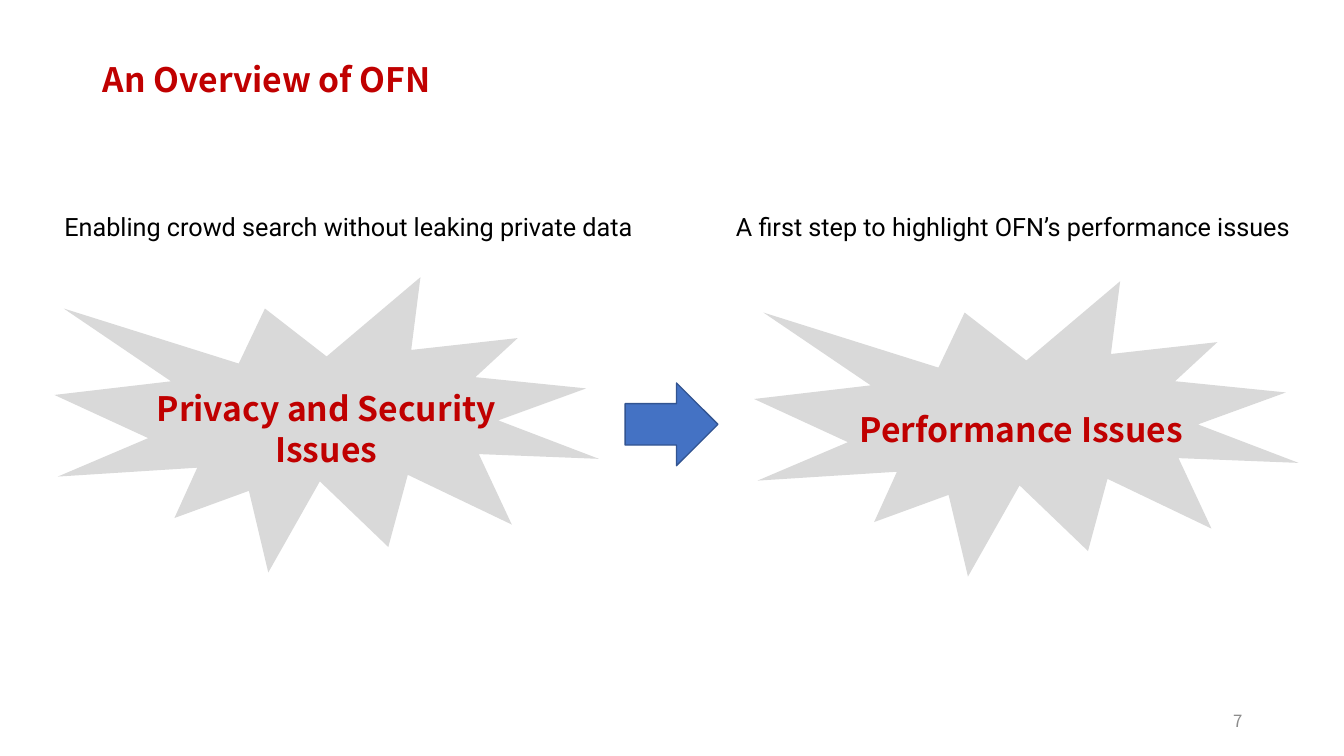
from pptx import Presentation
from pptx.dml.color import RGBColor
from pptx.enum.shapes import MSO_SHAPE
from pptx.enum.text import MSO_ANCHOR, PP_ALIGN
from pptx.util import Inches, Pt

RED = RGBColor(0xC0, 0, 0)
BLACK = RGBColor(0, 0, 0)
GREY = RGBColor(0x8C, 0x8C, 0x8C)
SILVER = RGBColor(0xD9, 0xD9, 0xD9)
BLUE = RGBColor(0x44, 0x72, 0xC4)
NAVY = RGBColor(0x32, 0x54, 0x91)
SANS, ROBOTO = "Noto Sans CJK SC", "Roboto"

WIDE, HIGH = 13.33, 7.5
HALF = WIDE / 2
TITLE = "An Overview of OFN"
NUMBER = "7"
# caption, caption left, burst place, label, label place, alignment
THEMES = [
    ("Enabling crowd search without leaking private data", 0.54, (0.54, 2.75),
     "Privacy and Security Issues", (1.26, 3.8, 3.95, 0.91), PP_ALIGN.CENTER),
    ("A first step to highlight OFN’s performance issues", 7.2, (7.48, 2.79),
     "Performance Issues", (8.43, 4, 3.95, 0.5), PP_ALIGN.LEFT),
]
BURST = (5.4, 2.93)
ARROW = (6.2, 3.8, 0.92, 0.82)


def box(*place):
    return [Inches(v) for v in place]


def write(shape, text, font=SANS, size=24, color=RED, bold=False,
          align=PP_ALIGN.LEFT, anchor=MSO_ANCHOR.TOP, space=None):
    frame = shape.text_frame
    frame.word_wrap = True
    frame.vertical_anchor = anchor
    para = frame.paragraphs[0]
    para.alignment = align
    para.line_spacing = space
    run = para.add_run()
    run.text = text
    run.font.name, run.font.size, run.font.bold = font, Pt(size), bold
    run.font.color.rgb = color


def draw(shapes, kind, place, fill, line=None):
    shape = shapes.add_shape(kind, *box(*place))
    shape.shadow.inherit = False
    shape.fill.solid()
    shape.fill.fore_color.rgb = fill
    if line is None:
        shape.line.fill.background()
    else:
        shape.line.color.rgb = line
        shape.line.width = Pt(1)


deck = Presentation()
deck.slide_width, deck.slide_height = box(WIDE, HIGH)
slide = deck.slides.add_slide(deck.slide_layouts[5])
shapes = slide.shapes

title = shapes.title
title.left, title.top, title.width, title.height = box(0.92, 0.4, 11.5, 0.82)
write(title, TITLE, bold=True, anchor=MSO_ANCHOR.MIDDLE, space=0.9)

number = shapes.add_textbox(*box(9.42, 6.95, 3, 0.4))
write(number, NUMBER, size=12, color=GREY, align=PP_ALIGN.RIGHT,
      anchor=MSO_ANCHOR.MIDDLE)

for caption, left, corner, label, place, align in THEMES:
    group = shapes.add_group_shape().shapes
    draw(group, MSO_SHAPE.EXPLOSION1, corner + BURST, SILVER)
    write(group.add_textbox(*box(*place)), label, bold=True, align=align,
          space=Pt(29))
    write(shapes.add_textbox(*box(left, 2.05, HALF, 0.4)), caption,
          font=ROBOTO, size=18, color=BLACK)

draw(shapes, MSO_SHAPE.RIGHT_ARROW, ARROW, BLUE, NAVY)

deck.save("out.pptx")
